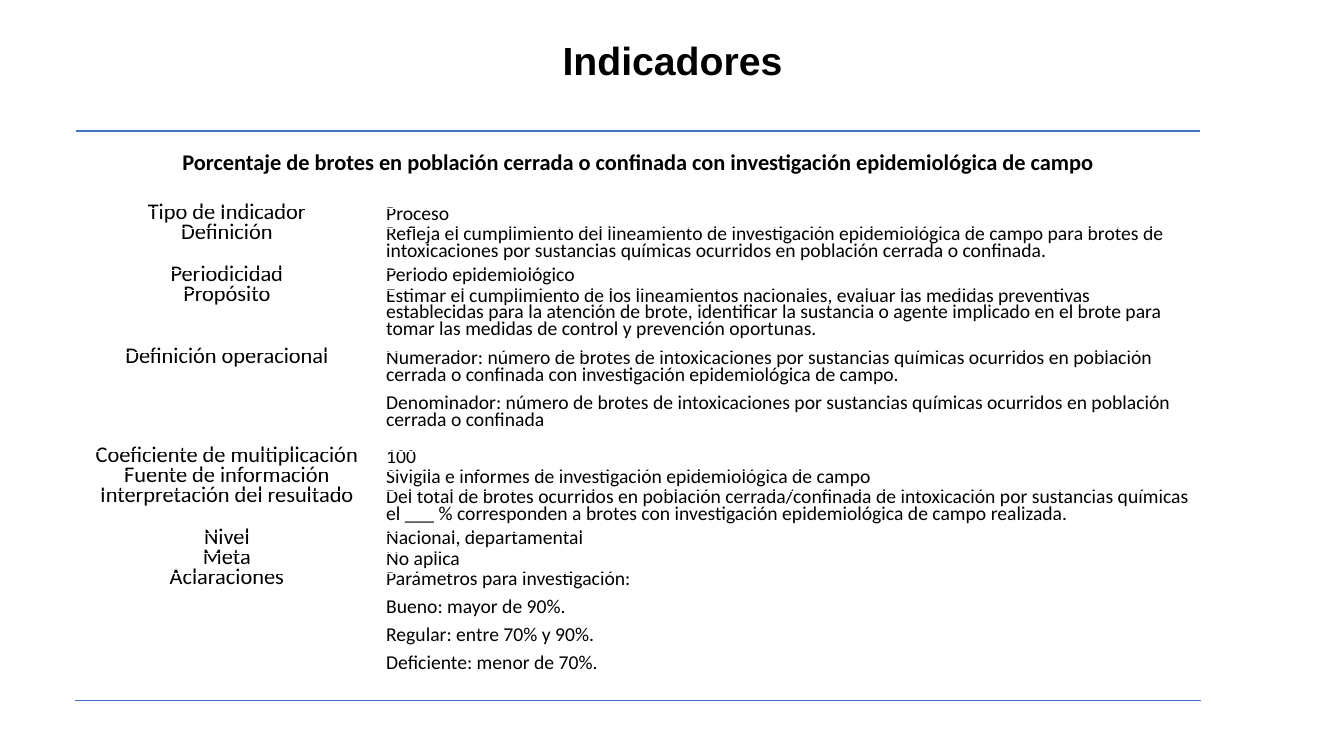
from lxml.etree import SubElement
from pptx import Presentation
from pptx.dml.color import RGBColor
from pptx.enum.text import MSO_ANCHOR as ANCHOR, PP_ALIGN as ALIGN
from pptx.oxml.ns import qn
from pptx.util import Inches, Pt

COLORS = {"text": "000000", "rule": "4472C4"}
WIDTH, HEIGHT = Inches(13.33), Inches(7.5)
COLUMNS = [3, 8.16]
HEADING_ROW = 0.77
HEADING = "Porcentaje de brotes en población cerrada o confinada con investigación epidemiológica de campo"
INDICATOR = [
    ("Tipo de Indicador", 0.2, ["Proceso"]),
    ("Definición", 0.41, [
        "Refleja el cumplimiento del lineamiento de investigación epidemiológica de campo para brotes de "
        "intoxicaciones por sustancias químicas ocurridos en población cerrada o confinada."]),
    ("Periodicidad", 0.2, ["Periodo epidemiológico"]),
    ("Propósito", 0.62, [
        "Estimar el cumplimiento de los lineamientos nacionales, evaluar las medidas preventivas "
        "establecidas para la atención de brote, identificar la sustancia o agente implicado en el brote "
        "para tomar las medidas de control y prevención oportunas."]),
    ("Definición operacional", 0.98, [
        "Numerador: número de brotes de intoxicaciones por sustancias químicas ocurridos en población "
        "cerrada o confinada con investigación epidemiológica de campo.",
        "Denominador: número de brotes de intoxicaciones por sustancias químicas ocurridos en población "
        "cerrada o confinada"]),
    ("Coeficiente de multiplicación", 0.2, ["100"]),
    ("Fuente de información", 0.2, ["Sivigila e informes de investigación epidemiológica de campo"]),
    ("Interpretación del resultado", 0.41, [
        "Del total de brotes ocurridos en población cerrada/confinada de intoxicación por sustancias "
        "químicas el ___ % corresponden a brotes con investigación epidemiológica de campo realizada."]),
    ("Nivel", 0.2, ["Nacional, departamental"]),
    ("Meta", 0.2, ["No aplica"]),
    ("Aclaraciones", 1.26, [
        "Parámetros para investigación:", "Bueno: mayor de 90%.",
        "Regular: entre 70% y 90%.", "Deficiente: menor de 70%."]),
]


def add_run(p, text, size, font="Calibri", bold=False):
    """Add a styled run to a paragraph."""
    r = p.add_run()
    r.text = text
    r.font.name, r.font.size, r.font.bold = font, Pt(size), bold
    r.font.color.rgb = RGBColor.from_string(COLORS["text"])


def add_title(slide, text):
    """Add the centred slide title."""
    box = slide.shapes.add_textbox(Inches(0.92), Inches(0.24), Inches(11.5), Inches(0.76))
    tf = box.text_frame
    tf.word_wrap = True
    tf.vertical_anchor = ANCHOR.MIDDLE
    p = tf.paragraphs[0]
    p.alignment, p.line_spacing = ALIGN.CENTER, 0.9
    add_run(p, text, 28, "Arial", True)


def fill_cell(cell, texts, size, align=ALIGN.LEFT, bold=False, top=0):
    """Write one paragraph per text in an unfilled cell."""
    cell.fill.background()
    cell.margin_left = cell.margin_right = Inches(0.08)
    cell.margin_top, cell.margin_bottom = Inches(top), 0
    tf = cell.text_frame
    for i, text in enumerate(texts):
        p = tf.add_paragraph() if i else tf.paragraphs[0]
        p.alignment, p.line_spacing, p.space_after = align, Pt(12.1), Pt(8)
        add_run(p, text, size, bold=bold)


def add_border(cell, side):
    """Draw a rule on one side of a cell, given as lnT or lnB."""
    tc_pr = cell._tc.get_or_add_tcPr()
    ln = SubElement(tc_pr, qn(f"a:{side}"), w=str(Pt(1)))
    SubElement(SubElement(ln, qn("a:solidFill")), qn("a:srgbClr"), val=COLORS["rule"])
    tc_pr.insert(0, ln)


def add_indicator_table(slide):
    """Add the indicator sheet with its heading and label rows."""
    heights = [HEADING_ROW] + [height for _, height, _ in INDICATOR]
    frame = slide.shapes.add_table(len(heights), len(COLUMNS), Inches(0.75), Inches(1.3),
                                   Inches(sum(COLUMNS)), Inches(sum(heights)))
    table = frame.table
    table.first_row = table.horz_banding = False
    for column, width in zip(table.columns, COLUMNS):
        column.width = Inches(width)
    for row, height in zip(table.rows, heights):
        row.height = Inches(height)
    heading = table.cell(0, 0)
    heading.merge(table.cell(0, 1))
    fill_cell(heading, [HEADING], 16, ALIGN.CENTER, True, top=0.28)
    for i, (label, _, texts) in enumerate(INDICATOR, 1):
        fill_cell(table.cell(i, 0), [label], 16, ALIGN.CENTER)
        fill_cell(table.cell(i, 1), texts, 14)
    for column in range(len(COLUMNS)):
        add_border(table.cell(0, column), "lnT")
        add_border(table.cell(len(INDICATOR), column), "lnB")


def main():
    """Build and save the slide."""
    prs = Presentation()
    prs.slide_width, prs.slide_height = WIDTH, HEIGHT
    slide = prs.slides.add_slide(prs.slide_layouts[6])
    add_title(slide, "Indicadores")
    add_indicator_table(slide)
    prs.save("out.pptx")


if __name__ == "__main__":
    main()
